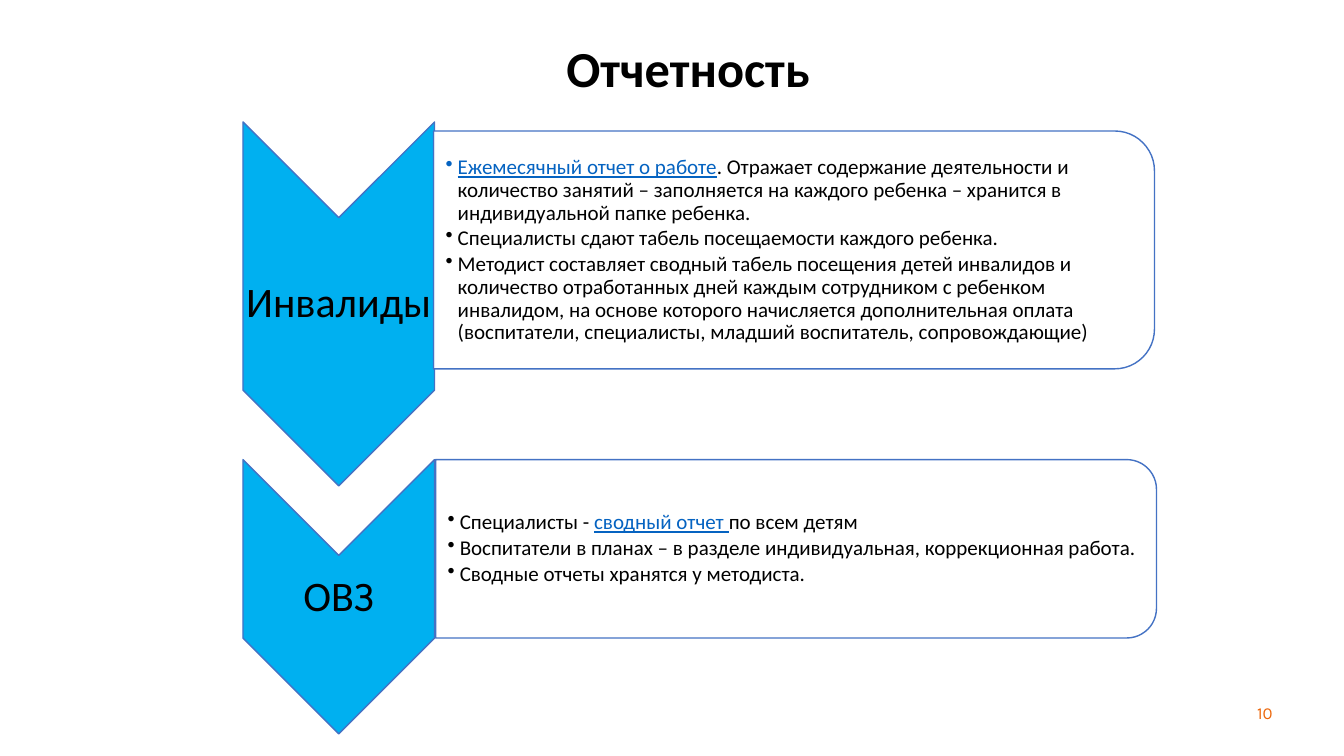
"""Build the reporting slide: two chevrons with their explanatory boxes."""
from lxml import etree
from pptx import Presentation
from pptx import util as u
from pptx.dml.color import RGBColor
from pptx.enum import shapes, text
from pptx.oxml.ns import qn

PX = 9144
COLORS = {
    "chevron": "00B0F0",
    "outline": "4472C4",
    "box": "FFFFFF",
    "text": "000000",
    "link": "0563C1",
    "number": "EC670B",
}
INDENT = 12
SECTIONS = [
    {
        "label": "Инвалиды",
        "chevron": (241, 121, 190, 361),
        "label_area": (241, 217, 190, 170),
        "box": (430, 130, 715, 236),
        "text_area": (430, 142, 704, 213),
        "items": [
            [
                ("Ежемесячный отчет о работе", "link"),
                (". Отражает содержание деятельности и количество занятий – "
                 "заполняется на каждого ребенка – хранится в индивидуальной "
                 "папке ребенка.", "text"),
            ],
            [("Специалисты сдают табель посещаемости каждого ребенка.", "text")],
            [("Методист составляет сводный табель посещения детей инвалидов и "
              "количество отработанных дней каждым сотрудником с ребенком "
              "инвалидом, на основе которого начисляется дополнительная оплата "
              "(воспитатели, специалисты, младший воспитатель, "
              "сопровождающие)", "text")],
        ],
    },
    {
        "label": "ОВЗ",
        "chevron": (241, 456, 190, 272),
        "label_area": (241, 552, 190, 82),
        "box": (432, 456, 715, 177),
        "text_area": (432, 465, 707, 159),
        "items": [
            [
                ("Специалисты - ", "text"),
                ("сводный отчет ", "link"),
                ("по всем детям", "text"),
            ],
            [("Воспитатели в планах – в разделе индивидуальная, "
              "коррекционная работа.", "text")],
            [("Сводные отчеты хранятся у методиста.", "text")],
        ],
    },
]


def color(name):
    """Return the named colour."""
    return RGBColor.from_string(COLORS[name])


def set_font(font, size, color_name="text", name="Calibri", bold=False):
    """Apply typeface, size, colour and weight."""
    font.name = name
    font.size = u.Pt(size)
    font.bold = bold
    font.color.rgb = color(color_name)


def add_text_frame(slide, area, insets, anchor=text.MSO_ANCHOR.MIDDLE):
    """Add a wrapping text box and return its frame."""
    frame = slide.shapes.add_textbox(*(value * PX for value in area)).text_frame
    frame.word_wrap = True
    frame.vertical_anchor = anchor
    (frame.margin_left, frame.margin_top,
     frame.margin_right, frame.margin_bottom) = (value * PX for value in insets)
    return frame


def add_centered_text(slide, area, inset, content, size, indent=0, bold=False):
    """Add one centred line of text."""
    paragraph = add_text_frame(slide, area, (inset,) * 4).paragraphs[0]
    paragraph.text = content
    paragraph.alignment = text.PP_ALIGN.CENTER
    paragraph.line_spacing = 0.9
    if indent:
        paragraph._p.get_or_add_pPr().set("marL", str(indent * PX))
    set_font(paragraph.font, size, bold=bold)


def add_turned_shape(slide, kind, area, fill, opacity=100):
    """Add a shape turned a quarter clockwise that covers the given area."""
    left, top, width, height = (value * PX for value in area)
    shift = (width - height) // 2
    shape = slide.shapes.add_shape(kind, left + shift, top - shift, height, width)
    shape.rotation = 90
    shape.shadow.inherit = False
    shape.fill.solid()
    shape.fill.fore_color.rgb = color(fill)
    shape.line.color.rgb = color("outline")
    shape.line.width = u.Pt(1)
    if opacity < 100:
        fill_color = shape._element.spPr.find(qn("a:solidFill"))[0]
        alpha = etree.SubElement(fill_color, qn("a:alpha"))
        alpha.set("val", str(opacity * 1000))


def add_bullet(paragraph):
    """Give the paragraph a hanging bullet."""
    properties = paragraph._p.get_or_add_pPr()
    properties.set("marL", str(INDENT * PX))
    properties.set("indent", str(-INDENT * PX))
    etree.SubElement(properties, qn("a:buChar")).set("char", "•")


def add_bullet_list(slide, area, items):
    """Add a bulleted list whose items are lists of coloured runs."""
    frame = add_text_frame(slide, area, (12, 1, 1, 1))
    for index, item in enumerate(items):
        paragraph = frame.add_paragraph() if index else frame.paragraphs[0]
        add_bullet(paragraph)
        paragraph.line_spacing = 0.9
        paragraph.space_after = u.Pt(2.25)
        set_font(paragraph.font, 15)
        for content, color_name in item:
            run = paragraph.add_run()
            run.text = content
            if color_name == "link":
                run.font.color.rgb = color(color_name)
                run.font.underline = True


def add_section(slide, section):
    """Add a labelled chevron and its box with a list."""
    kinds = shapes.MSO_SHAPE
    add_turned_shape(slide, kinds.CHEVRON, section["chevron"], "chevron")
    add_centered_text(slide, section["label_area"], 2, section["label"], 30)
    add_turned_shape(slide, kinds.ROUND_2_SAME_RECTANGLE, section["box"], "box", 90)
    add_bullet_list(slide, section["text_area"], section["items"])


def add_slide_number(slide, number):
    """Add the slide number in the lower right corner."""
    frame = add_text_frame(slide, (1237, 692, 44, 36), (10, 5, 0, 5),
                           text.MSO_ANCHOR.TOP)
    paragraph = frame.paragraphs[0]
    paragraph.text = number
    set_font(paragraph.font, 12, "number", "Karla")


def main():
    """Build and save the presentation."""
    presentation = Presentation()
    presentation.slide_width = 1333 * PX
    presentation.slide_height = 750 * PX
    slide = presentation.slides.add_slide(presentation.slide_layouts[6])
    add_slide_number(slide, "10")
    add_centered_text(slide, (168, 10, 1024, 121), 10, "Отчетность", 36,
                      indent=5, bold=True)
    for section in SECTIONS:
        add_section(slide, section)
    presentation.save("out.pptx")


if __name__ == "__main__":
    main()
